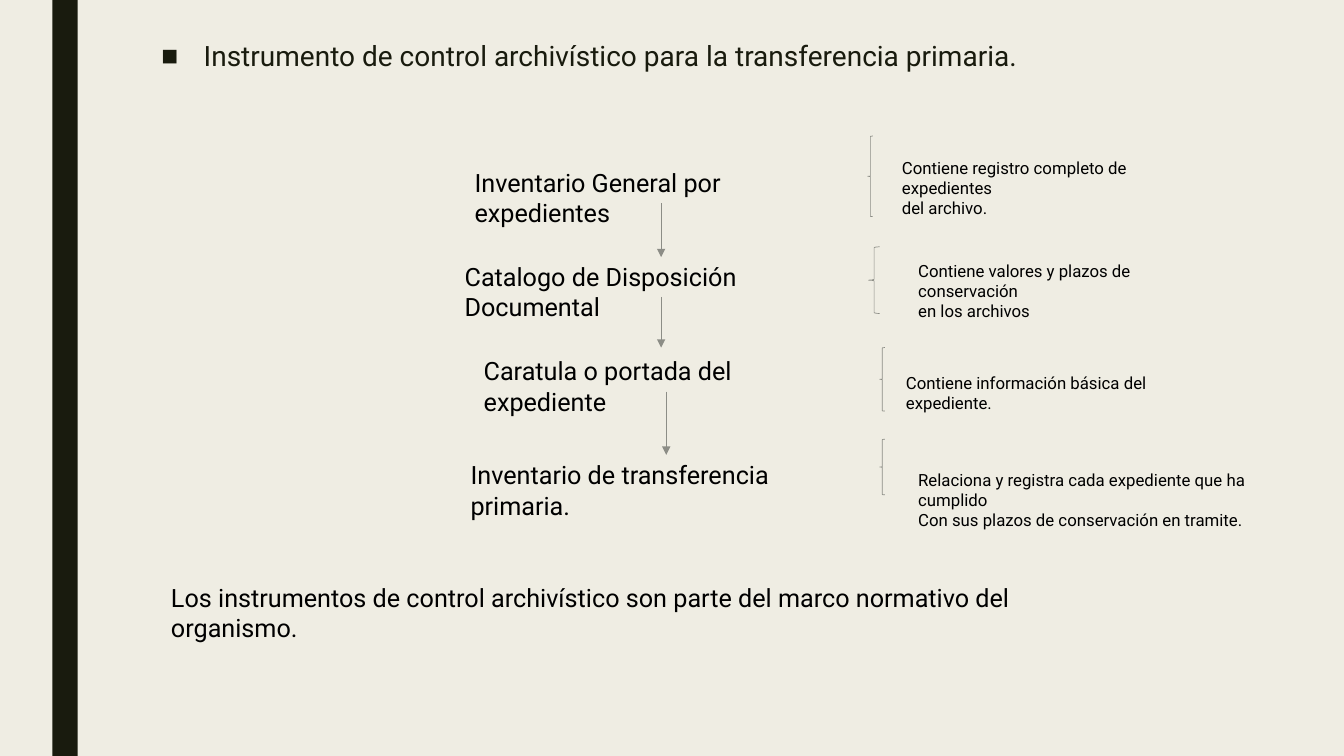
from lxml.etree import SubElement
from pptx import Presentation
from pptx.dml.color import RGBColor
from pptx.enum.shapes import MSO_CONNECTOR as Connector, MSO_SHAPE as Shape
from pptx.enum.text import MSO_ANCHOR as Anchor, MSO_AUTO_SIZE as AutoSize
from pptx.oxml.ns import qn
from pptx.util import Cm, Pt

FONT = "Roboto"
COLORS = {"paper": "EFEDE3", "dark": "191B0E", "text": "000000", "line": "8C8D86"}

HEADING = "Instrumento de control archivístico para la transferencia primaria."
CLOSING = ("Los instrumentos de control archivístico son parte del marco normativo "
           "del organismo.")

# Lengths in cm. label and note: left, top, width; brace: left, top, width, height;
# arrow: x and end of the arrow that leads to the next step.
STEPS = [
    {"label": (11.71, 4.09, 9.96), "name": "Inventario General por expedientes",
     "brace": (21.87, 3.43, 0.13, 2.03), "note": (22.48, 3.84, 8.33),
     "detail": "Contiene registro completo de expedientes\ndel archivo.",
     "arrow": (16.66, 6.48)},
    {"label": (11.46, 6.45, 10.44), "name": "Catalogo de Disposición Documental",
     "brace": (21.89, 6.22, 0.28, 1.68), "note": (22.89, 6.45, 8.26),
     "detail": "Contiene valores y plazos de conservación\nen los archivos",
     "arrow": (16.66, 8.76)},
    {"label": (11.94, 8.84, 9.7), "name": "Caratula o portada del expediente",
     "brace": (22.17, 8.76, 0.13, 1.6), "note": (22.58, 9.27, 8.51),
     "detail": "Contiene información básica del expediente.",
     "arrow": (16.79, 11.46)},
    {"label": (11.61, 11.46, 10.34), "name": "Inventario de transferencia primaria.",
     "brace": (22.17, 11.07, 0.13, 1.4), "note": (22.89, 11.71, 10.26),
     "detail": "Relaciona y registra cada expediente que ha cumplido\n"
               "Con sus plazos de conservación en tramite.",
     "arrow": None},
]
LABEL_HEIGHT = 1.03
NOTE_LINE_HEIGHT = 0.51
NOTE_PADDING = 0.25


def color(name):
    return RGBColor.from_string(COLORS[name])


def write(frame, text, size, color_name):
    frame.text = text
    frame.word_wrap = True
    frame.auto_size = AutoSize.NONE
    frame.vertical_anchor = Anchor.TOP
    for para in frame.paragraphs:
        for span in para.runs:
            span.font.name = FONT
            span.font.size = Pt(size)
            span.font.color.rgb = color(color_name)


def add_text(page, place, height, text, size):
    box = page.shapes.add_textbox(*map(Cm, (*place, height)))
    write(box.text_frame, text, size, "text")


def add_band(page, height):
    band = page.shapes.add_shape(Shape.RECTANGLE, Cm(1.32), 0, Cm(0.64), height)
    band.shadow.inherit = False
    band.fill.solid()
    band.fill.fore_color.rgb = color("dark")
    band.line.fill.background()


def add_heading(page):
    page.shapes.title.element.getparent().remove(page.shapes.title.element)
    body = page.placeholders[1]
    body.left, body.top, body.width, body.height = map(Cm, (3.81, 0.91, 29.72, 17.22))
    write(body.text_frame, HEADING, 20, "dark")
    para = body.text_frame.paragraphs[0]
    para.line_spacing = 0.94
    para.space_before, para.space_after = Pt(10), Pt(2)
    props = para._p.get_or_add_pPr()
    props.set("marL", str(Cm(1.07)))
    props.set("indent", str(-Cm(1.07)))
    SubElement(props, qn("a:buFont"), typeface="Arial")
    SubElement(props, qn("a:buChar"), char="■")


def style_line(line):
    line.color.rgb = color("line")
    line.width = Pt(0.5)


def add_arrow(page, x, start, end):
    arrow = page.shapes.add_connector(Connector.STRAIGHT, *map(Cm, (x, start, x, end)))
    style_line(arrow.line)
    SubElement(arrow.line._get_or_add_ln(), qn("a:tailEnd"), type="triangle")
    SubElement(arrow._element.spPr, qn("a:effectLst"))


def add_brace(page, place):
    brace = page.shapes.add_shape(Shape.LEFT_BRACE, *map(Cm, place))
    brace.shadow.inherit = False
    brace.fill.background()
    style_line(brace.line)


def add_step(page, step):
    add_text(page, step["label"], LABEL_HEIGHT, step["name"], 18)
    add_brace(page, step["brace"])
    lines = len(step["detail"].split("\n"))
    add_text(page, step["note"], NOTE_PADDING + lines * NOTE_LINE_HEIGHT,
             step["detail"], 12)
    if step["arrow"]:
        x, end = step["arrow"]
        add_arrow(page, x, step["label"][1] + LABEL_HEIGHT, end)


def main():
    deck = Presentation()
    deck.slide_width, deck.slide_height = Cm(33.87), Cm(19.05)
    page = deck.slides.add_slide(deck.slide_layouts[1])
    page.background.fill.solid()
    page.background.fill.fore_color.rgb = color("paper")
    add_band(page, deck.slide_height)
    add_heading(page)
    for step in STEPS:
        add_step(page, step)
    add_text(page, (4.06, 14.55, 23.95), LABEL_HEIGHT, CLOSING, 18)
    deck.save("out.pptx")


if __name__ == "__main__":
    main()
